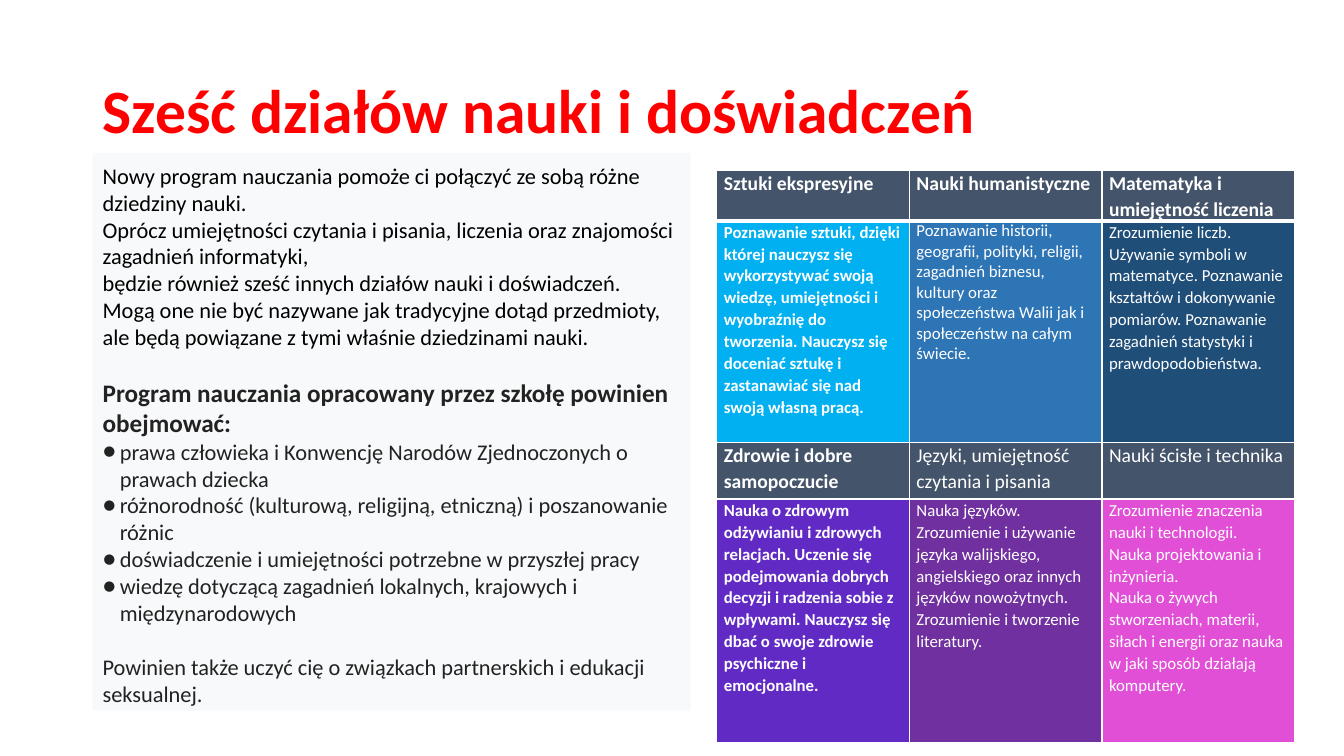
from dataclasses import dataclass
from pptx import Presentation
from pptx.dml.color import RGBColor as Rgb
from pptx.enum.shapes import MSO_SHAPE as Kind
from pptx.enum.text import MSO_ANCHOR as Anchor, PP_ALIGN as Align
from pptx.oxml.ns import qn
from pptx.util import Inches, Pt
from lxml.etree import SubElement as Sub


@dataclass(frozen=True)
class Theme:
    font: str = "Calibri"
    red: str = "FF0000"
    black: str = "000000"
    dark: str = "222222"
    white: str = "FFFFFF"
    pale: str = "F8F9FA"
    slate: str = "44546A"
    sky: str = "00B0F0"
    blue: str = "2E75B6"
    navy: str = "1F4E79"
    violet: str = "612AC4"
    purple: str = "7030A0"
    pink: str = "E14FD7"
    title: int = 44
    lead: int = 18
    body: int = 16
    head: int = 14
    cell: int = 12


T = Theme()

INTRO = [
    "Nowy program nauczania pomoże ci połączyć ze sobą różne dziedziny nauki.",
    "Oprócz umiejętności czytania i pisania, liczenia oraz znajomości zagadnień informatyki,",
    "będzie również sześć innych działów nauki i doświadczeń.",
    "Mogą one nie być nazywane jak tradycyjne dotąd przedmioty, "
    "ale będą powiązane z tymi właśnie dziedzinami nauki.",
]
LEAD = "Program nauczania opracowany przez szkołę powinien obejmować:"
GOALS = [
    "prawa człowieka i Konwencję Narodów Zjednoczonych o prawach dziecka",
    "różnorodność (kulturową, religijną, etniczną) i poszanowanie różnic",
    "doświadczenie i umiejętności potrzebne w przyszłej pracy",
    "wiedzę dotyczącą zagadnień lokalnych, krajowych i międzynarodowych",
]
CLOSE = "Powinien także uczyć cię o związkach partnerskich i edukacji seksualnej."

AREAS = [
    ["Sztuki ekspresyjne", "Nauki humanistyczne", "Matematyka i umiejętność liczenia"],
    [
        "Poznawanie sztuki, dzięki której nauczysz się wykorzystywać swoją wiedzę, "
        "umiejętności i wyobraźnię do tworzenia. Nauczysz się doceniać sztukę "
        "i zastanawiać się nad swoją własną pracą.",
        "Poznawanie historii, geografii, polityki, religii, zagadnień biznesu, kultury oraz "
        "społeczeństwa Walii jak i społeczeństw na całym świecie.",
        "Zrozumienie liczb. Używanie symboli w matematyce. Poznawanie kształtów i dokonywanie "
        "pomiarów. Poznawanie zagadnień statystyki i prawdopodobieństwa.",
    ],
    ["Zdrowie i dobre samopoczucie", "Języki, umiejętność czytania i pisania",
     "Nauki ścisłe i technika"],
    [
        "Nauka o zdrowym odżywianiu i zdrowych relacjach. Uczenie się podejmowania dobrych "
        "decyzji i radzenia sobie z wpływami. Nauczysz się dbać o swoje zdrowie psychiczne "
        "i emocjonalne.",
        "Nauka języków. Zrozumienie i używanie języka walijskiego, angielskiego oraz innych "
        "języków nowożytnych. Zrozumienie i tworzenie literatury.",
        "Zrozumienie znaczenia nauki i technologii.\n"
        "Nauka projektowania i inżynieria.\n"
        "Nauka o żywych stworzeniach, materii, siłach i energii oraz nauka w jaki sposób "
        "działają komputery.",
    ],
]
FILLS = [[T.slate] * 3, [T.sky, T.blue, T.navy], [T.slate] * 3, [T.violet, T.purple, T.pink]]
ROWS = [0.47, 2.2, 0.56, 2.42]


def write(frame, text, size=T.body, color=T.black, bold=False, line=1.0, gap=0, mark=None):
    for part in text.split("\n"):
        par = frame.paragraphs[0]
        if par.runs:
            par = frame.add_paragraph()
        par.alignment = Align.LEFT
        par.line_spacing = line
        par.space_before = Pt(gap)
        par.space_after = Pt(0)
        run = par.add_run()
        run.text = part
        run.font.name = T.font
        run.font.size = Pt(size)
        run.font.bold = bold
        run.font.color.rgb = Rgb.from_string(color)
        if mark:
            props = par._p.get_or_add_pPr()
            props.set("marL", str(Inches(0.17)))
            props.set("indent", str(-Inches(0.17)))
            Sub(props, qn("a:buFont"), typeface=T.font)
            Sub(props, qn("a:buChar"), char=mark)


def pad(item, side, top, base):
    item.margin_left = item.margin_right = Inches(side)
    item.margin_top, item.margin_bottom = Inches(top), Inches(base)


def paint(item, color):
    item.fill.solid()
    item.fill.fore_color.rgb = Rgb.from_string(color)


def edge(cell, top, base):
    props = cell._tc.get_or_add_tcPr()
    for spot, (side, width) in enumerate(zip("LRTB", [1, 1, top, base])):
        line = Sub(props, qn("a:ln" + side), w=str(Pt(width)))
        Sub(Sub(line, qn("a:solidFill")), qn("a:srgbClr"), val=T.white)
        props.insert(spot, line)


def add_title(slide):
    box = slide.shapes.add_textbox(Inches(0.92), Inches(0.4), Inches(11.5), Inches(1.45))
    frame = box.text_frame
    frame.word_wrap = True
    frame.vertical_anchor = Anchor.MIDDLE
    write(frame, "Sześć działów nauki i doświadczeń",
          size=T.title, color=T.red, bold=True, line=0.9)


def add_panel(slide):
    box = slide.shapes.add_shape(
        Kind.RECTANGLE, Inches(0.92), Inches(1.52), Inches(5.93), Inches(5.53))
    box.shadow.inherit = False
    paint(box, T.pale)
    box.line.fill.background()
    frame = box.text_frame
    frame.word_wrap = True
    frame.vertical_anchor = Anchor.MIDDLE
    pad(frame, 0.1, 0.05, 0)
    write(frame, "\n".join(INTRO))
    write(frame, LEAD, size=T.lead, color=T.dark, bold=True, gap=19.5)
    write(frame, "\n".join(GOALS), color=T.dark, mark="●")
    write(frame, CLOSE, color=T.dark, gap=19.5)


def add_areas(slide):
    grid = slide.shapes.add_table(
        4, 3, Inches(7.11), Inches(1.69), Inches(5.73), Inches(sum(ROWS))).table
    grid.horz_banding = False
    for col in grid.columns:
        col.width = Inches(1.91)
    for r, (tall, texts, fills) in enumerate(zip(ROWS, AREAS, FILLS)):
        grid.rows[r].height = Inches(tall)
        for c, (text, fill) in enumerate(zip(texts, fills)):
            cell = grid.cell(r, c)
            pad(cell, 0.07, 0, 0)
            paint(cell, fill)
            edge(cell, 3 if r == 1 else 1, 3 if r == 0 else 1)
            write(cell.text_frame, text, size=T.cell if r % 2 else T.head, color=T.white,
                  bold=r == 0 or c == 0, line=1.0 if (r, c) == (1, 1) else 1.07)


def main():
    deck = Presentation()
    deck.slide_width, deck.slide_height = Inches(13.33), Inches(7.5)
    slide = deck.slides.add_slide(deck.slide_layouts[6])
    add_title(slide)
    add_areas(slide)
    add_panel(slide)
    deck.save("out.pptx")


if __name__ == "__main__":
    main()
